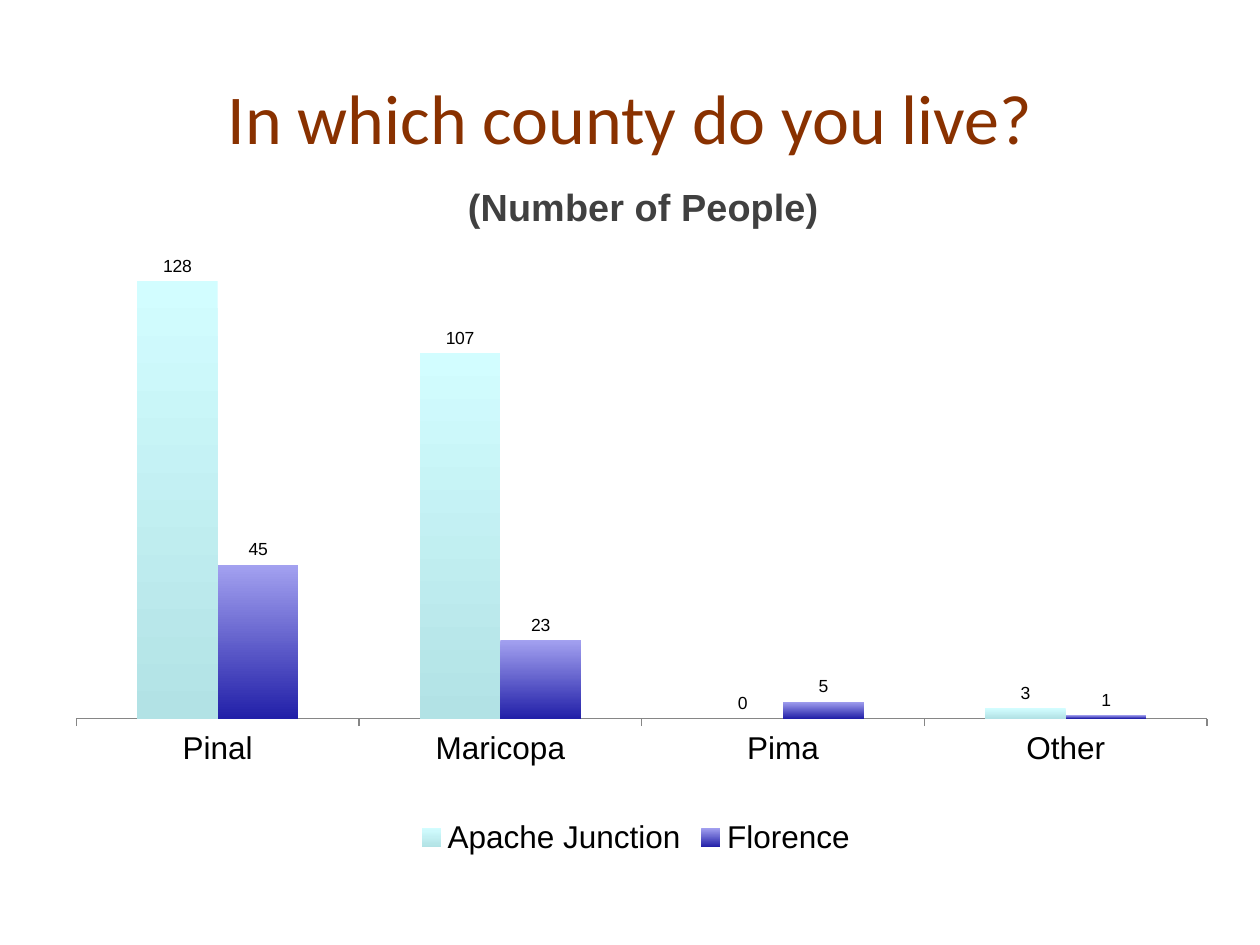
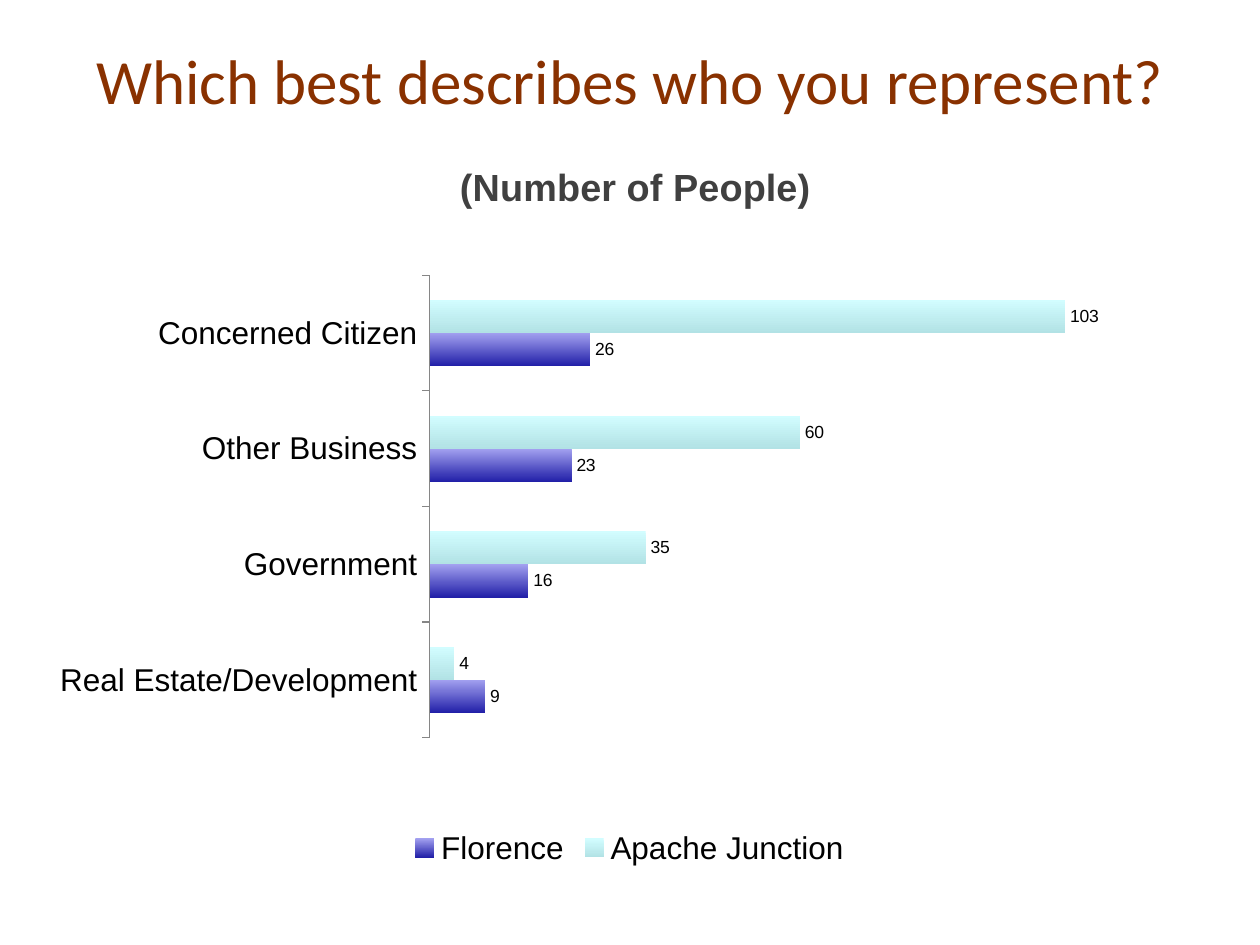
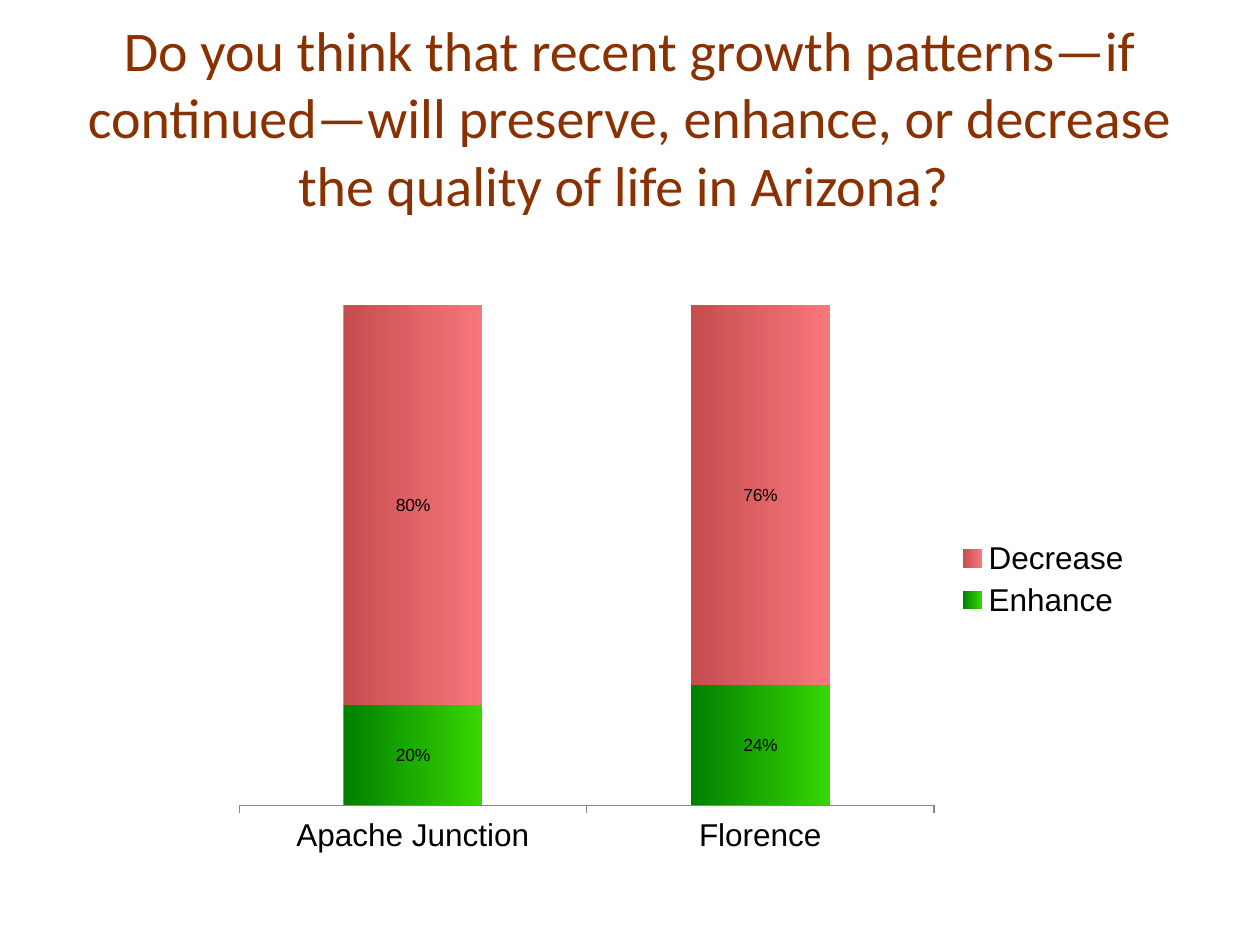
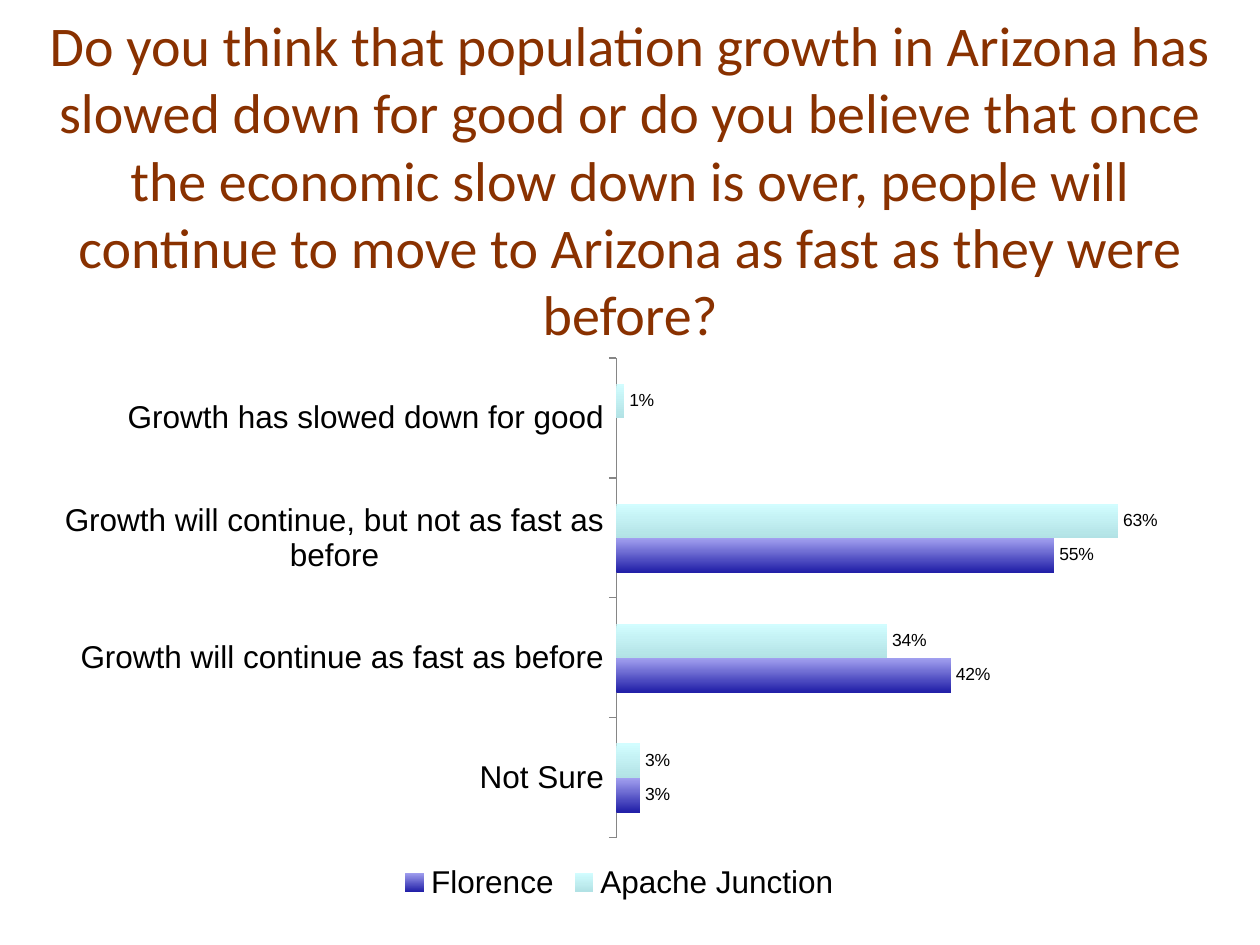
"""Builds four survey slides, each with a question and a chart of the answers."""
from lxml import etree
from pptx import Presentation
from pptx.chart.data import CategoryChartData
from pptx.dml.color import RGBColor
from pptx.enum.chart import XL_CHART_TYPE, XL_LABEL_POSITION, XL_LEGEND_POSITION
from pptx.enum.text import MSO_ANCHOR, MSO_AUTO_SIZE, PP_ALIGN
from pptx.oxml.ns import qn
from pptx.util import Cm, Pt

COLUMNS = XL_CHART_TYPE.COLUMN_CLUSTERED
BARS = XL_CHART_TYPE.BAR_CLUSTERED
STACK = XL_CHART_TYPE.COLUMN_STACKED_100
BOTTOM, RIGHT = XL_LEGEND_POSITION.BOTTOM, XL_LEGEND_POSITION.RIGHT
OUTSIDE, CENTER = XL_LABEL_POSITION.OUTSIDE_END, XL_LABEL_POSITION.CENTER

RUST = RGBColor(0x89, 0x31, 0x00)
CHARCOAL = RGBColor(0x40, 0x40, 0x40)
BLACK = RGBColor(0x00, 0x00, 0x00)
AXIS_GRAY = RGBColor(0x86, 0x86, 0x86)
ACROSS, DOWN = 0, 270
GRADIENTS = {
    "Apache Junction": (RGBColor(0xD2, 0xFD, 0xFF), RGBColor(0xB2, 0xE2, 0xE5), DOWN),
    "Florence": (RGBColor(0xA3, 0xA1, 0xF0), RGBColor(0x22, 0x20, 0xA8), DOWN),
    "Enhance": (RGBColor(0x00, 0x80, 0x00), RGBColor(0x37, 0xD6, 0x00), ACROSS),
    "Decrease": (RGBColor(0xC5, 0x4D, 0x4E), RGBColor(0xF8, 0x77, 0x7B), ACROSS),
}
TITLE_SPOT = {"x": 0.35, "y": 0.04}

QUESTIONS = [
    {
        "title": "In which county do you live?",
        "title_size": 40, "title_box": (1.27, 0.76, 22.86, 3.18),
        "kind": COLUMNS, "chart_box": (1.07, 2.97, 23.5, 14.4),
        "plot": {"x": 0.02, "y": 0.13, "w": 0.97, "h": 0.67},
        "subtitle": "(Number of People)", "top": 140, "format": "General",
        "categories": ["Pinal", "Maricopa", "Pima", "Other"],
        "series": {"Apache Junction": (128, 107, 0, 3), "Florence": (45, 23, 5, 1)},
    },
    {
        "title": "Which best describes who you represent?",
        "title_size": 36, "title_box": (1.27, 0, 22.86, 3.18),
        "kind": BARS, "chart_box": (0.84, 2.54, 23.7, 15.04),
        "plot": {"x": 0.33, "y": 0.2, "w": 0.63, "h": 0.62},
        "subtitle": "(Number of People)", "top": 120, "format": "General",
        "categories": ["Concerned Citizen", "Other Business", "Government",
                       "Real Estate/Development"],
        "series": {"Apache Junction": (103, 60, 35, 4), "Florence": (26, 23, 16, 9)},
    },
    {
        "title": "Do you think that recent growth patterns—if continued—will preserve, "
                 "enhance, or decrease the quality of life in Arizona? ",
        "title_size": 32, "title_box": (1.27, 0.76, 22.86, 3.18),
        "kind": STACK, "chart_box": (4.45, 5.92, 18.62, 11.51),
        "top": 1, "format": "0%",
        "categories": ["Apache Junction", "Florence"],
        "series": {"Enhance": (0.2, 0.24), "Decrease": (0.8, 0.76)},
    },
    {
        "title": "Do you think that population growth in Arizona has slowed down for good "
                 "or do you believe that once the economic slow down is over, people will "
                 "continue to move to Arizona as fast as they were before?",
        "title_size": 32, "title_box": (0.64, 0.43, 24.13, 6.35),
        "kind": BARS, "chart_box": (0.84, 6.99, 23.29, 11.28),
        "top": 0.7, "format": "0%;;",
        "categories": ["Growth has slowed down for good",
                       "Growth will continue, but not as fast as before",
                       "Growth will continue as fast as before", "Not Sure"],
        "series": {"Apache Junction": (0.01, 0.63, 0.34, 0.03),
                   "Florence": (0, 0.55, 0.42, 0.03)},
    },
]


def set_title(slide, question):
    box = slide.shapes.title
    box.left, box.top, box.width, box.height = map(Cm, question["title_box"])
    frame = box.text_frame
    frame.text = question["title"]
    frame.word_wrap = True
    frame.auto_size = MSO_AUTO_SIZE.NONE
    frame.vertical_anchor = MSO_ANCHOR.MIDDLE
    para = frame.paragraphs[0]
    para.alignment = PP_ALIGN.CENTER
    set_font(para.font, "Calibri", question["title_size"], RUST)


def set_font(font, name, size, color):
    font.name, font.size = name, Pt(size)
    font.color.rgb = color


def place(part, index, spot, inner=False):
    """Gives a chart part a fixed spot, in fractions of the chart."""
    for old in part.findall(qn("c:layout")):
        part.remove(old)
    layout = etree.Element(qn("c:layout"))
    manual = etree.SubElement(layout, qn("c:manualLayout"))
    settings = {"layoutTarget": "inner"} if inner else {}
    settings.update(xMode="edge", yMode="edge", **spot)
    for name, value in settings.items():
        etree.SubElement(manual, qn("c:" + name)).set("val", str(value))
    part.insert(index, layout)


def add_chart(slide, question):
    kind = question["kind"]
    data = CategoryChartData(number_format=question["format"])
    data.categories = question["categories"]
    for name, values in question["series"].items():
        data.add_series(name, values)
    chart = slide.shapes.add_chart(kind, *map(Cm, question["chart_box"]), data).chart
    set_font(chart.font, "Arial", 18, BLACK)

    chart.has_title = "subtitle" in question
    if chart.has_title:
        frame = chart.chart_title.text_frame
        frame.text = question["subtitle"]
        font = frame.paragraphs[0].font
        set_font(font, "Arial", 21.6, CHARCOAL)
        font.bold = True
        place(frame._element.getparent().getparent(), 1, TITLE_SPOT)
    if "plot" in question:
        plot_area = chart._chartSpace.find(".//" + qn("c:plotArea"))
        place(plot_area, 0, question["plot"], inner=True)

    chart.has_legend = True
    chart.legend.position = RIGHT if kind == STACK else BOTTOM
    chart.legend.include_in_layout = False
    chart.category_axis.format.line.color.rgb = AXIS_GRAY
    chart.category_axis.has_major_gridlines = False
    chart.category_axis.reverse_order = kind == BARS
    axis = chart.value_axis
    axis.visible = axis.has_major_gridlines = False
    axis.minimum_scale, axis.maximum_scale = 0, question["top"]

    plot = chart.plots[0]
    plot.vary_by_categories = False
    plot.gap_width = 150
    plot.overlap = 100 if kind == STACK else 0
    for series in plot.series:
        start, end, angle = GRADIENTS[series.name]
        fill = series.format.fill
        fill.gradient()
        fill.gradient_angle = angle
        for stop, color in zip(fill.gradient_stops, (start, end)):
            stop.color.rgb = color
        series.invert_if_negative = False
        labels = series.data_labels
        labels.show_value = True
        labels.number_format = question["format"]
        labels.number_format_is_linked = False
        labels.position = CENTER if kind == STACK else OUTSIDE
        set_font(labels.font, "Arial", 10, BLACK)


def main():
    deck = Presentation()
    deck.slide_width, deck.slide_height = Cm(25.4), Cm(19.05)
    title_only = deck.slide_layouts[5]
    for question in QUESTIONS:
        slide = deck.slides.add_slide(title_only)
        set_title(slide, question)
        add_chart(slide, question)
    deck.save("out.pptx")


if __name__ == "__main__":
    main()
